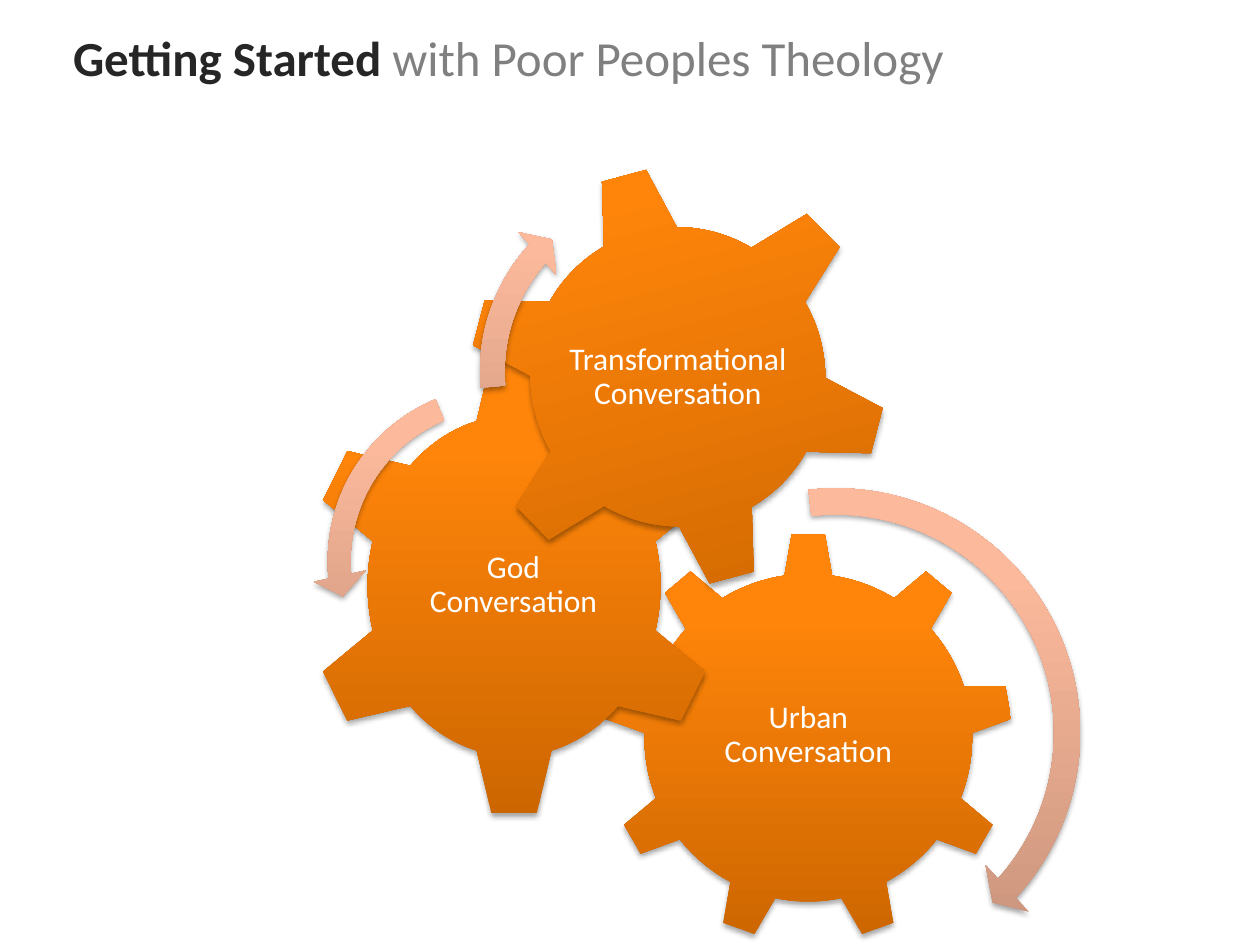
import copy
import dataclasses

import lxml.etree
import pptx
import pptx.dml.color
import pptx.enum.shapes
import pptx.enum.text
import pptx.oxml
import pptx.oxml.ns
import pptx.util

SHAPE = pptx.enum.shapes.MSO_SHAPE
ALIGN = pptx.enum.text.PP_ALIGN
COLUMNS, ROWS = 100, 75


@dataclasses.dataclass(frozen=True)
class Theme:
    font: str = "Calibri"
    title_size: int = 28
    label_size: int = 18
    strong: str = "262626"
    muted: str = "808080"
    label: str = "FFFFFF"
    gear: tuple = ((0, "CC6600"), (0.8, "FF850A"), (1, "FF850C"))
    arrow: tuple = ((0, "C28F78"), (0.8, "FCB99C"), (1, "FFB99A"))


class GearSlide:
    """Draws gears, labels and arrows on one slide with a shared theme."""

    def __init__(self, prs, theme):
        self.theme = theme
        self.s = prs.slides.add_slide(prs.slide_layouts[5])
        self.col = prs.slide_width / COLUMNS
        self.row = prs.slide_height / ROWS

    def box(self, x, y, w, h):
        return (round(x * self.col), round(y * self.row),
                round(w * self.col), round(h * self.row))

    def style(self, r, size, color, bold=False):
        r.font.name = self.theme.font
        r.font.size = pptx.util.Pt(size)
        r.font.bold = bold
        r.font.color.rgb = pptx.dml.color.RGBColor.from_string(color)

    def title(self, box, parts):
        sp = self.s.shapes.title
        sp.left, sp.top, sp.width, sp.height = self.box(*box)
        tf = sp.text_frame
        tf.auto_size = pptx.enum.text.MSO_AUTO_SIZE.NONE
        tf.vertical_anchor = pptx.enum.text.MSO_ANCHOR.MIDDLE
        p = tf.paragraphs[0]
        p.alignment = ALIGN.LEFT
        for text, color, bold in parts:
            r = p.add_run()
            r.text = text
            self.style(r, self.theme.title_size, color, bold)

    def solid(self, kind, box, stops, rotation=0, adjustments=()):
        sp = self.s.shapes.add_shape(kind, *self.box(*box))
        sp.rotation = rotation
        for i, value in enumerate(adjustments):
            sp.adjustments[i] = value
        sp.line.fill.background()
        self.gradient(sp, stops)
        self.shadow(sp)

    def gradient(self, sp, stops):
        sp.fill.gradient()
        sp.fill.gradient_angle = 90
        gs_list = sp._element.spPr.find(".//" + pptx.oxml.ns.qn("a:gsLst"))
        gs_list.append(copy.deepcopy(gs_list[-1]))
        for stop, (position, color) in zip(sp.fill.gradient_stops, stops):
            stop.position = position
            stop.color.rgb = pptx.dml.color.RGBColor.from_string(color)

    def shadow(self, sp):
        sp.shadow.inherit = False
        effects = sp._element.spPr.find(pptx.oxml.ns.qn("a:effectLst"))
        effects.append(pptx.oxml.parse_xml(
            f'<a:outerShdw {pptx.oxml.ns.nsdecls("a")} blurRad="40000" dist="23000" '
            'dir="5400000" rotWithShape="0"><a:srgbClr val="000000">'
            '<a:alpha val="35000"/></a:srgbClr></a:outerShdw>'))

    def gear(self, kind, box, rotation=0):
        self.solid(kind, box, self.theme.gear, rotation)

    def arrow(self, kind, x, y, size, adjustments):
        self.solid(kind, (x, y, size, size), self.theme.arrow, adjustments=adjustments)

    def label(self, text, box):
        tf = self.s.shapes.add_textbox(*self.box(*box)).text_frame
        tf.word_wrap = True
        tf.vertical_anchor = pptx.enum.text.MSO_ANCHOR.MIDDLE
        inset = pptx.util.Inches(0.03)
        tf.margin_left = tf.margin_right = tf.margin_top = tf.margin_bottom = inset
        p = tf.paragraphs[0]
        p.text = text
        p.alignment = ALIGN.CENTER
        p.line_spacing = 0.9
        self.style(p.runs[0], self.theme.label_size, self.theme.label)


def main():
    prs = pptx.Presentation()
    prs.slide_width = pptx.util.Inches(10)
    prs.slide_height = pptx.util.Inches(7.5)
    theme = Theme()
    slide = GearSlide(prs, theme)
    slide.title((4.8, 0.8, 91.9, 7.5), (
        ("Getting Started ", theme.strong, True),
        ("with Poor Peoples Theology", theme.muted, False)))
    gears = (
        (SHAPE.GEAR_9, (47.9, 42.3, 32.5, 32.5), 0,
         "Urban Conversation", (54.4, 50, 19.5, 16.7)),
        (SHAPE.GEAR_6, (24.2, 28, 33.2, 37), 0,
         "God Conversation", (32.5, 36.9, 16.5, 19.1)),
        (SHAPE.GEAR_6, (37.1, 13, 33.4, 33.8), 345,
         "Transformational Conversation", (44.4, 20.5, 18.8, 18.9)),
    )
    for kind, box, rotation, text, text_box in gears:
        slide.gear(kind, box, rotation)
        slide.label(text, text_box)
    arrows = (
        (SHAPE.CIRCULAR_ARROW, 45.5, 37.3, 41.7, (0.05, 2.99, 25.39, 158.13, 0.06)),
        (SHAPE.LEFT_CIRCULAR_ARROW, 24.8, 29.4, 30.3, (0.06, 4.3, 104.89, 148.38, 0.07)),
        (SHAPE.CIRCULAR_ARROW, 36.8, 13.2, 32.6, (0.06, 3.94, 133.14, 105.08, 0.07)),
    )
    for arrow in arrows:
        slide.arrow(*arrow)
    prs.save("out.pptx")


if __name__ == "__main__":
    main()
